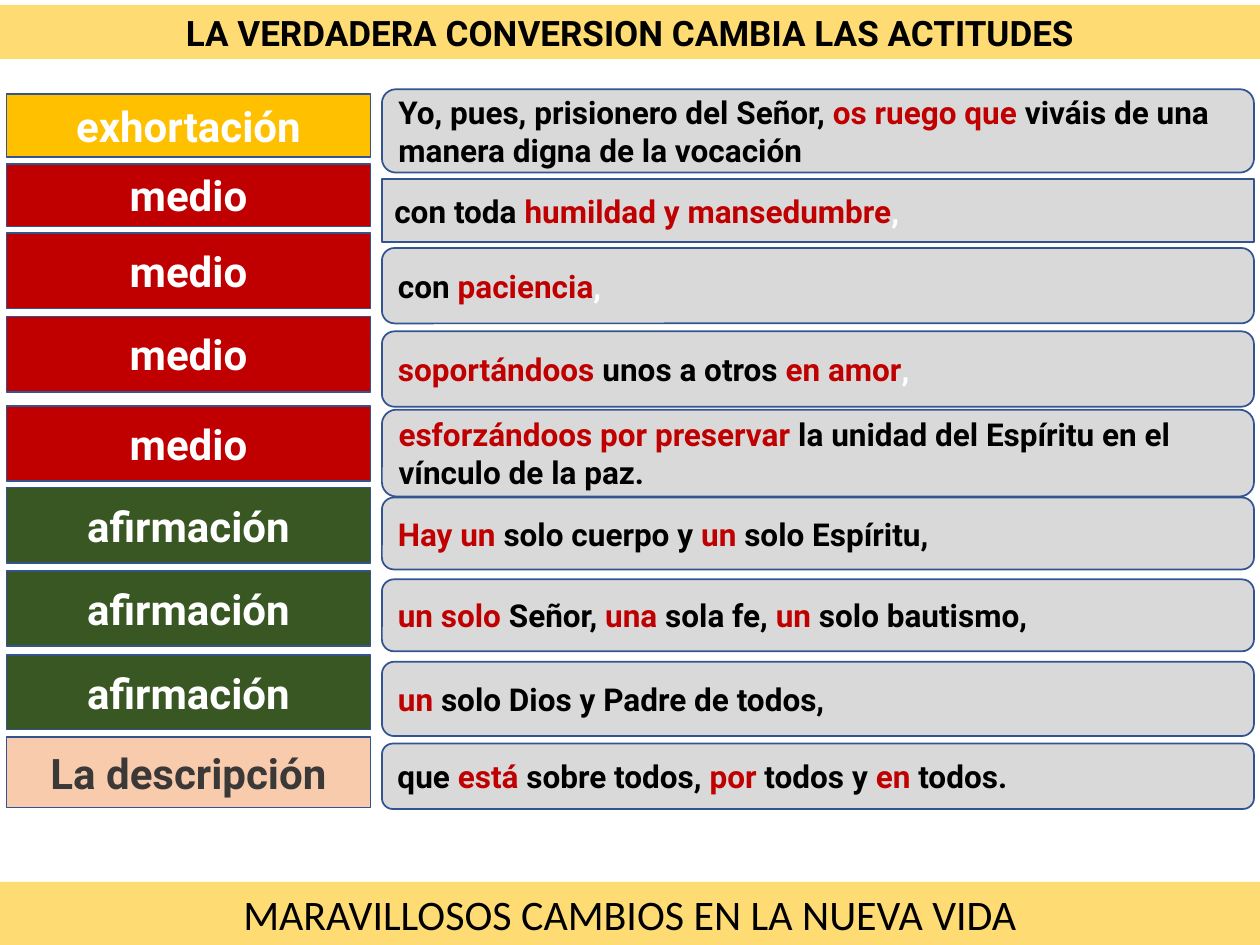
from dataclasses import dataclass
from itertools import cycle

from lxml import etree
from pptx import Presentation
from pptx import util as u
from pptx.dml.color import RGBColor
from pptx.enum import shapes, text
from pptx.oxml.ns import qn


@dataclass(frozen=True)
class Theme:
    gold: str = "FFC000"
    red: str = "C00000"
    green: str = "385723"
    peach: str = "F8CBAD"
    grey: str = "D9D9D9"
    edge: str = "325491"
    black: str = "000000"
    white: str = "FFFFFF"
    dark: str = "3B3838"
    head: int = 20
    label: int = 24
    verse: int = 18


T = Theme()
RECT = shapes.MSO_SHAPE.RECTANGLE
ROUND = shapes.MSO_SHAPE.ROUNDED_RECTANGLE
MID, TOP = text.MSO_ANCHOR.MIDDLE, text.MSO_ANCHOR.TOP
LEFT, CENTER = text.PP_ALIGN.LEFT, text.PP_ALIGN.CENTER

deck = Presentation()
deck.slide_width, deck.slide_height = u.Cm(25.4), u.Cm(19.05)
slide = deck.slides.add_slide(deck.slide_layouts[6])


def add_box(kind, place, fill, edge=None, anchor=MID, align=CENTER):
    """Add a filled shape; return it with its first paragraph."""
    box = slide.shapes.add_shape(kind, *map(u.Cm, place))
    box.shadow.inherit = False
    box.fill.solid()
    box.fill.fore_color.rgb = RGBColor.from_string(fill)
    if edge:
        box.line.color.rgb = RGBColor.from_string(edge)
        box.line.width = u.Pt(1)
    else:
        box.line.fill.background()
    frame = box.text_frame
    for key, val in {"word_wrap": True, "vertical_anchor": anchor}.items():
        setattr(frame, key, val)
    para = frame.paragraphs[0]
    para.alignment = align
    return box, para


def add_run(para, words, size, color, name="Roboto", bold=True):
    run = para.add_run()
    run.text = words
    form = {"size": u.Pt(size), "name": name, "bold": bold}
    for key, val in form.items():
        setattr(run.font, key, val)
    run.font.color.rgb = RGBColor.from_string(color)


# Left column: top, height, fill, font colour, words
labels = [
    (1.9, 1.27, T.gold, T.white, "exhortación"),
    (3.3, 1.27, T.red, T.white, "medio"),
    (4.7, 1.52, T.red, T.white, "medio"),
    (6.38, 1.52, T.red, T.white, "medio"),
    (8.18, 1.52, T.red, T.white, "medio"),
    (9.83, 1.52, T.green, T.white, "afirmación"),
    (11.51, 1.52, T.green, T.white, "afirmación"),
    (13.21, 1.5, T.green, T.white, "afirmación"),
    (14.86, 1.42, T.peach, T.dark, "La descripción"),
]
for top, high, fill, color, words in labels:
    box, para = add_box(RECT, (0.13, top, 7.34, high), fill, T.edge)
    add_run(para, words, T.label, color)

# Right column: top, height, words; each bar switches between black and red,
# and a comma on its own is white
verses = [
    (1.8, 1.68, "Yo, pues, prisionero del Señor, |os ruego que |"
                "viváis de una manera digna de la vocación"),
    (3.61, 1.27, "con toda |humildad y mansedumbre|,"),
    (5, 1.52, "con |paciencia|,"),
    (6.68, 1.52, "|soportándoos |unos a otros |en amor|,"),
    (8.26, 1.75, "|esforzándoos por preservar |"
                 "la unidad del Espíritu en el vínculo de la paz."),
    (10.03, 1.45, "|Hay un |solo cuerpo y |un| solo Espíritu,"),
    (11.68, 1.45, "|un solo |Señor, |una |sola fe, |un |solo bautismo,"),
    (13.34, 1.5, "|un |solo Dios y Padre de todos,"),
    (14.99, 1.32, "que |está |sobre todos, |por |todos y |en |todos."),
]
for row, (top, high, words) in enumerate(verses):
    box, para = add_box(ROUND, (7.7, top, 17.58, high), T.grey, T.edge,
                        align=LEFT)
    if row == 1:
        box.adjustments[0] = 0
    for part, color in zip(words.split("|"), cycle((T.black, T.red))):
        if part:
            add_run(para, part, T.verse, T.white if part == "," else color)

# Bands across the foot and head: top, height, words, size, font, bold
bands = [
    (17.78, 1.27, "MARAVILLOSOS CAMBIOS EN LA NUEVA VIDA",
     T.label, "Calibri", False),
    (0.1, 1.09, "LA VERDADERA CONVERSION CAMBIA LAS ACTITUDES",
     T.head, "Roboto", True),
]
for top, high, words, size, name, bold in bands:
    box, para = add_box(RECT, (0, top, 25.4, high), T.gold, anchor=TOP)
    tint = box.fill._xPr.find(qn("a:solidFill"))[0]
    etree.SubElement(tint, qn("a:alpha"), val="55000")
    add_run(para, words, size, T.black, name, bold)

deck.save("out.pptx")
